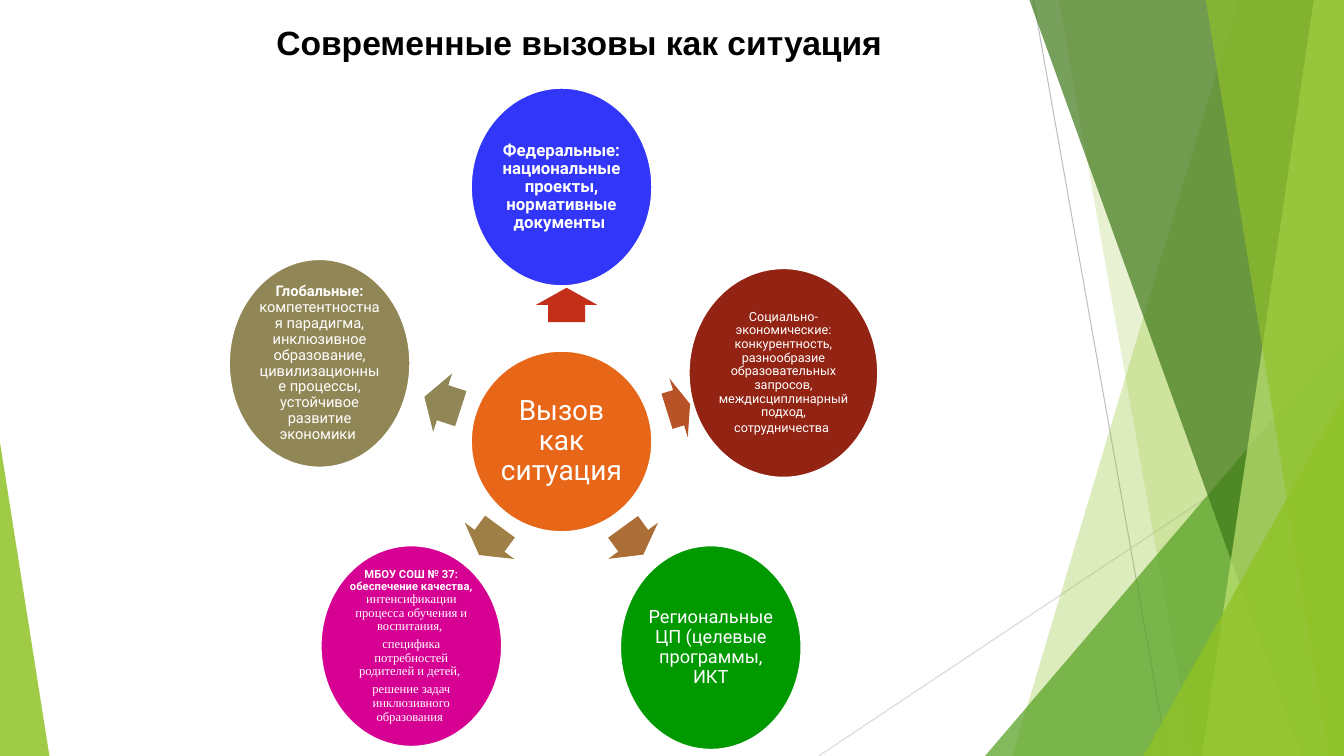
import lxml.etree
import pptx
import pptx.dml.color
import pptx.enum.shapes
import pptx.enum.text
import pptx.oxml.ns
import pptx.util

Inches = pptx.util.Inches
Pt = pptx.util.Pt
Shapes = pptx.enum.shapes.MSO_SHAPE
qn = pptx.oxml.ns.qn

WIDTH, HEIGHT = 13.33, 7.5
WHITE, LIME = "FFFFFF", "90C226"


def color(value):
    return pptx.dml.color.RGBColor.from_string(value)


class SlideBuilder:
    font = "Roboto"
    text_color = WHITE
    line_spacing = 0.9

    def __init__(self, slide):
        self.slide = slide
        self.shapes = slide.shapes

    def paint(self, shape, fill, opacity=100):
        shape.shadow.inherit = False
        shape.fill.solid()
        shape.fill.fore_color.rgb = color(fill)
        shape.line.fill.background()
        if opacity < 100:
            solid = shape.fill._xPr.find(qn("a:solidFill"))
            alpha = lxml.etree.SubElement(solid[0], qn("a:alpha"))
            alpha.set("val", str(opacity * 1000))

    def line(self, start, end, line_color):
        connector = self.shapes.add_connector(
            pptx.enum.shapes.MSO_CONNECTOR.STRAIGHT,
            *(Inches(value) for value in start + end))
        connector.line.color.rgb = color(line_color)
        connector.line.width = Pt(0.75)
        lxml.etree.SubElement(connector._element.spPr, qn("a:effectLst"))

    def preset(self, kind, box, fill, opacity=100):
        shape = self.shapes.add_shape(kind, *(Inches(value) for value in box))
        self.paint(shape, fill, opacity)
        return shape

    def ribbon(self, top, bottom, fill, opacity):
        corners = [(top, 0), (WIDTH, 0), (WIDTH, HEIGHT), (bottom, HEIGHT)]
        points = [(Inches(x), Inches(y)) for x, y in corners]
        builder = self.shapes.build_freeform(*points[0])
        builder.add_line_segments(points[1:], close=True)
        self.paint(builder.convert_to_shape(), fill, opacity)

    def triangle(self, box, apex, fill, opacity):
        shape = self.preset(Shapes.ISOSCELES_TRIANGLE, box, fill, opacity)
        shape.adjustments[0] = apex

    def arrow(self, box, rotation, fill):
        shape = self.preset(Shapes.RIGHT_ARROW, box, fill)
        shape.adjustments[0] = 0.6
        shape.adjustments[1] = 0.5
        shape.rotation = rotation

    def circle(self, box, fill, inset, paragraphs):
        shape = self.preset(Shapes.OVAL, box, fill)
        shape.line.color.rgb = color(WHITE)
        shape.line.width = Pt(1.5)
        frame = shape.text_frame
        frame.word_wrap = True
        frame.vertical_anchor = pptx.enum.text.MSO_ANCHOR.MIDDLE
        frame.margin_left = frame.margin_right = Inches(inset)
        frame.margin_top = frame.margin_bottom = Inches(inset)
        for index, runs in enumerate(paragraphs):
            paragraph = frame.paragraphs[0] if index == 0 else frame.add_paragraph()
            paragraph.alignment = pptx.enum.text.PP_ALIGN.CENTER
            paragraph.line_spacing = self.line_spacing
            if index < len(paragraphs) - 1:
                paragraph.space_after = Pt(3)
            for text, size, bold, font in runs:
                run = paragraph.add_run()
                run.text = text
                self.style(run.font, size, bold, font, self.text_color)

    def style(self, target, size, bold, font, text_color):
        target.size = Pt(size)
        target.bold = bold
        target.name = font or self.font
        target.color.rgb = color(text_color)

    def title(self, box, text):
        frame = self.shapes.add_textbox(*(Inches(value) for value in box)).text_frame
        frame.word_wrap = True
        paragraph = frame.paragraphs[0]
        paragraph.text = text
        paragraph.alignment = pptx.enum.text.PP_ALIGN.CENTER
        self.style(paragraph.font, 24, True, "Arial", "000000")


def draw_backdrop(builder):
    builder.line((10.25, 0), (11.58, HEIGHT), "BFBFBF")
    builder.line((WIDTH, 4.03), (8.12, HEIGHT), "D9D9D9")
    builder.ribbon(12.28, 10.04, LIME, 30)
    builder.ribbon(10.5, 11.83, LIME, 20)
    builder.triangle((9.77, 3.33, 3.56, 4.17), 1, "54A021", 72)
    builder.ribbon(10.21, 12.91, "3F7819", 70)
    builder.ribbon(13.03, 11.92, "C0E474", 70)
    builder.ribbon(11.96, 13.18, LIME, 65)
    builder.triangle((11.34, 3.93, 1.99, 3.57), 1, LIME, 80)
    builder.triangle((0, 4.39, 0.49, 3.11), 0, LIME, 85)


def draw_challenges(builder):
    serif = "Times New Roman"
    arrows = [
        ((5.45, 2.72, 0.34, 0.61), 270, "C42F1A"),
        ((6.61, 3.74, 0.24, 0.61), 342.6, "B85328"),
        ((6.11, 5.06, 0.34, 0.61), 54, "AB6E37"),
        ((4.68, 5.06, 0.35, 0.61), 126.3, "9E7F46"),
        ((4.2, 3.69, 0.38, 0.61), 198, "918655"),
    ]
    circles = [
        ((4.67, 3.48, 1.8, 1.8), "E76618", 0.03,
         [[("Вызов как ситуация", 20, False, None)]]),
        ((4.67, 0.87, 1.8, 1.97), "3136F9", 0.02,
         [[("Федеральные: национальные проекты, нормативные документы ",
            12, True, None)]]),
        ((6.83, 2.66, 1.88, 2.08), "932313", 0.01,
         [[("Социально-экономические: конкурентность, разнообразие "
            "образовательных запросов, междисциплинарный подход, "
            "сотрудничества", 9, False, None), (" ", 10.5, False, None)]]),
        ((6.15, 5.41, 1.8, 2.03), "009900", 0.02,
         [[("Региональные ЦП (целевые программы, ИКТ", 13, False, None)]]),
        ((3.18, 5.41, 1.8, 2), "D60093", 0.01,
         [[("МБОУ СОШ № 37: обеспечение качества, ", 8, True, None),
           ("интенсификации процесса обучения и воспитания, ", 9, False, serif)],
          [("специфика потребностей родителей и детей, ", 9, False, serif)],
          [("решение задач инклюзивного образования ", 9, False, serif)]]),
        ((2.27, 2.57, 1.8, 2.07), "918655", 0.02,
         [[("Глобальные: ", 10.5, True, None),
           ("компетентностная парадигма, инклюзивное образование, "
            "цивилизационные процессы, устойчивое развитие экономики ",
            10.5, False, None)]]),
    ]
    for arrow in arrows:
        builder.arrow(*arrow)
    for circle in circles:
        builder.circle(*circle)


def main():
    presentation = pptx.Presentation()
    presentation.slide_width = Inches(WIDTH)
    presentation.slide_height = Inches(HEIGHT)
    slide = presentation.slides.add_slide(presentation.slide_layouts[6])
    builder = SlideBuilder(slide)
    draw_backdrop(builder)
    draw_challenges(builder)
    builder.title((0.46, 0.17, 10.57, 0.5), "Современные вызовы как ситуация")
    presentation.save("out.pptx")


if __name__ == "__main__":
    main()
